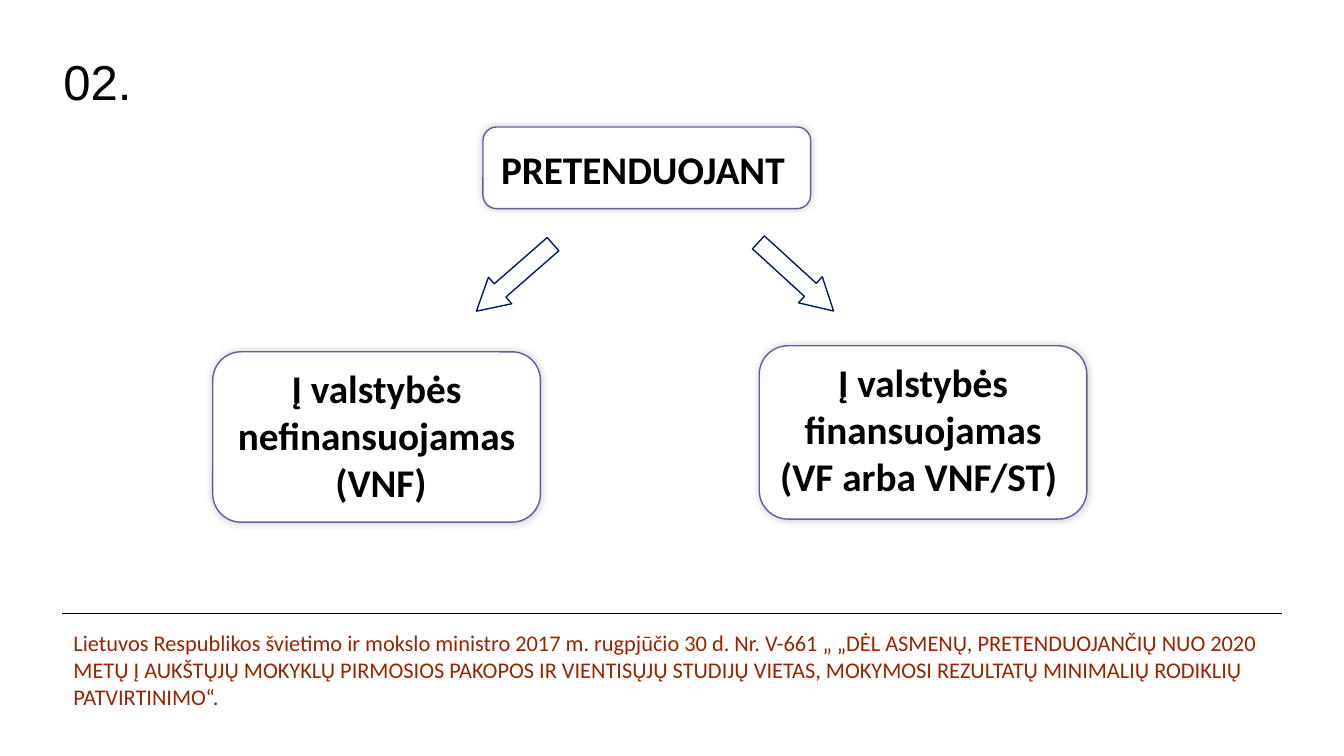
from dataclasses import dataclass

from lxml import etree
from pptx import Presentation
from pptx.dml.color import RGBColor
from pptx.enum.shapes import MSO_CONNECTOR, MSO_SHAPE
from pptx.enum.text import MSO_ANCHOR, PP_ALIGN
from pptx.oxml.ns import qn
from pptx.util import Emu, Pt

EMU_PER_PX = 9144
STRAIGHT = MSO_CONNECTOR.STRAIGHT
ROUNDED = MSO_SHAPE.ROUNDED_RECTANGLE
DOWN_ARROW = MSO_SHAPE.DOWN_ARROW
LEFT, CENTER = PP_ALIGN.LEFT, PP_ALIGN.CENTER
TOP = MSO_ANCHOR.TOP


@dataclass(frozen=True)
class Theme:
    black: str = "000000"
    white: str = "FFFFFF"
    box_line: str = "645C9F"
    arrow_line: str = "002060"
    citation: str = "982500"
    number_font: str = "Arial"
    body_font: str = "Calibri"
    number_size: int = 35
    box_size: int = 28
    citation_size: int = 16


def px(length):
    return Emu(length * EMU_PER_PX)


class SlideBuilder:
    def __init__(self, slide, theme):
        self.slide = slide
        self.theme = theme

    def set_lines(self, frame, lines, size, font, color, bold=False, align=LEFT):
        frame.word_wrap = True
        frame.vertical_anchor = TOP
        frame.text = "\n".join(lines)
        for paragraph in frame.paragraphs:
            paragraph.alignment = align
            for run in paragraph.runs:
                run.font.size = Pt(size)
                run.font.name = font
                run.font.bold = bold
                run.font.color.rgb = RGBColor.from_string(color)

    def text(self, place, line, size, font, color):
        label = self.slide.shapes.add_textbox(*map(px, place))
        self.set_lines(label.text_frame, [line], size, font, color)

    def shape(self, kind, place, line_color):
        shape = self.slide.shapes.add_shape(kind, *map(px, place))
        shape.shadow.inherit = False
        shape.fill.solid()
        shape.fill.fore_color.rgb = RGBColor.from_string(self.theme.white)
        shape.line.color.rgb = RGBColor.from_string(line_color)
        shape.line.width = Pt(1)
        return shape

    def box(self, place, lines, padding, align):
        box = self.shape(ROUNDED, place, self.theme.box_line)
        effects = box._element.spPr.find(qn("a:effectLst"))
        glow = etree.SubElement(effects, qn("a:outerShdw"), blurRad=str(Pt(6)),
                                dist="0", dir="13500000", rotWithShape="0")
        tint = etree.SubElement(glow, qn("a:srgbClr"), val=self.theme.black)
        etree.SubElement(tint, qn("a:alpha"), val="20000")
        frame = box.text_frame
        frame.margin_left = frame.margin_right = frame.margin_top = px(padding)
        frame.margin_bottom = 0
        self.set_lines(frame, lines, self.theme.box_size, self.theme.body_font,
                       self.theme.black, True, align)

    def arrow(self, place, rotation):
        arrow = self.shape(DOWN_ARROW, place, self.theme.arrow_line)
        arrow.adjustments[0] = 0.5
        arrow.adjustments[1] = 0.89
        arrow.rotation = rotation

    def rule(self, left, right, y):
        rule = self.slide.shapes.add_connector(
            STRAIGHT, px(left), px(y), px(right), px(y))
        rule.line.color.rgb = RGBColor.from_string(self.theme.black)
        rule.line.width = Pt(0.75)
        etree.SubElement(rule._element.spPr, qn("a:effectLst"))


def main():
    deck = Presentation()
    deck.slide_width, deck.slide_height = px(1333), px(750)
    theme = Theme()
    page = SlideBuilder(deck.slides.add_slide(deck.slide_layouts[6]), theme)

    page.rule(62, 1272, 609)
    page.text((53, 46, 96, 62), "02.", theme.number_size,
              theme.number_font, theme.black)
    page.text((63, 619, 1209, 91),
              "Lietuvos Respublikos švietimo ir mokslo ministro 2017 m. "
              "rugpjūčio 30 d. Nr. V-661 „ „DĖL ASMENŲ, PRETENDUOJANČIŲ NUO "
              "2020 METŲ Į AUKŠTŲJŲ MOKYKLŲ PIRMOSIOS PAKOPOS IR VIENTISŲJŲ "
              "STUDIJŲ VIETAS, MOKYMOSI REZULTATŲ MINIMALIŲ RODIKLIŲ "
              "PATVIRTINIMO“.",
              theme.citation_size, theme.body_font, theme.citation)

    page.box((753, 343, 325, 172),
             ["Į valstybės", "finansuojamas", "(VF arba VNF/ST) "], 4, CENTER)
    page.box((211, 349, 325, 169),
             ["Į valstybės", "nefinansuojamas", " (VNF)"], 4, CENTER)
    page.box((479, 126, 325, 81), ["PRETENDUOJANT"], 14, LEFT)

    page.arrow((772, 224, 35, 101), 312.4)
    page.arrow((493, 225, 35, 101), 48.8)

    deck.save("out.pptx")


if __name__ == "__main__":
    main()
